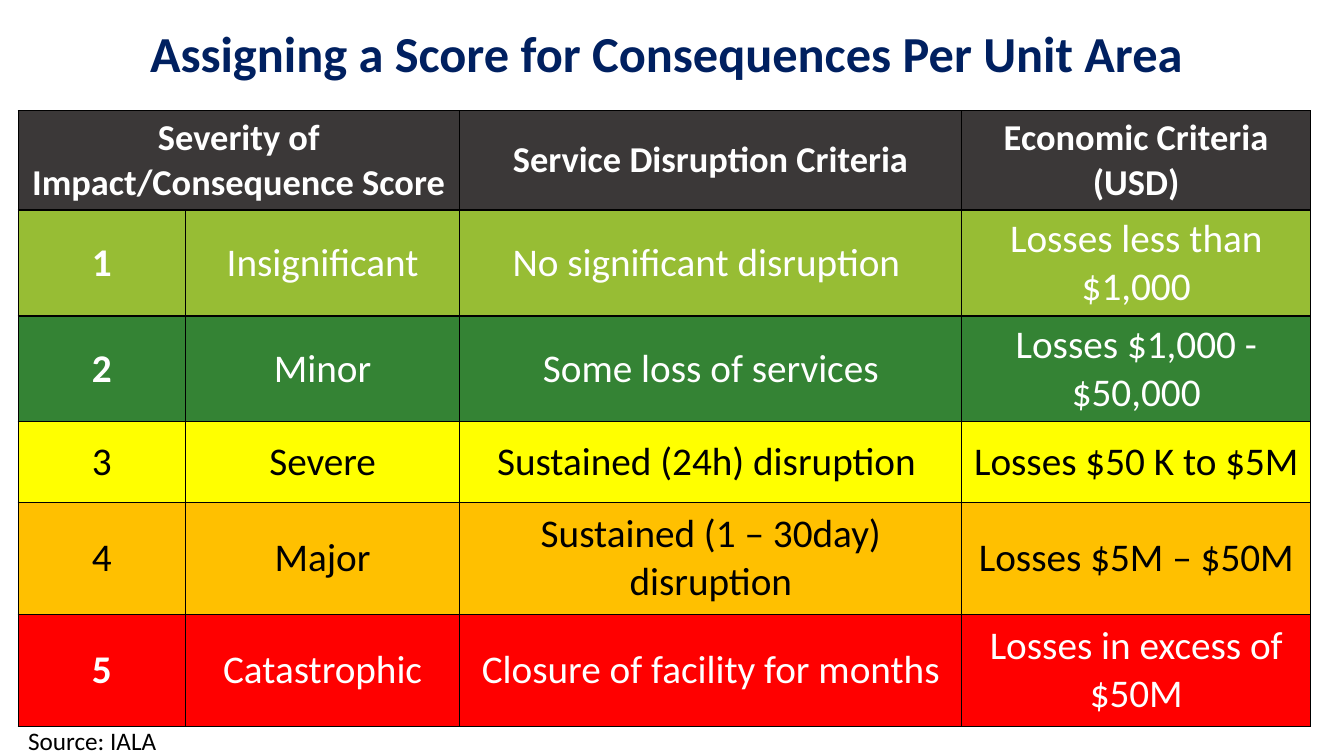
from lxml import etree
from pptx import Presentation
from pptx.dml.color import RGBColor
from pptx.enum import text
from pptx.oxml import ns
from pptx.util import Inches, Pt

FONT = "Calibri"
WHITE, BLACK, NAVY = "FFFFFF", "000000", "002060"
COLUMN_WIDTHS = [1.66, 2.72, 4.98, 3.46]
ROW_HEIGHTS = [0.8, 0.8, 0.8, 0.8, 1.11, 1.11]
HEADER_FILL = "3B3838"
HEADER = ["Severity of Impact/Consequence Score", "", "Service Disruption Criteria", "Economic Criteria (USD)"]
SEVERITIES = [
    ("97BD34", WHITE, ["1", "Insignificant", "No significant disruption ", "Losses less than $1,000"]),
    ("348334", WHITE, ["2", "Minor", "Some loss of services", "Losses $1,000 - $50,000"]),
    ("FFFF00", BLACK, ["3", "Severe", "Sustained (24h) disruption ", "Losses $50 K to $5M"]),
    ("FFC000", BLACK, ["4", "Major", "Sustained (1 – 30day) disruption", "Losses $5M – $50M"]),
    ("FF0000", WHITE, ["5", "Catastrophic", "Closure of facility for months", "Losses in excess of $50M"]),
]


def rgb(color):
    """Return the colour for a hex string."""
    return RGBColor.from_string(color)


def paint(target, color):
    """Give a shape or a cell a solid fill."""
    target.fill.solid()
    target.fill.fore_color.rgb = rgb(color)


def write(frame, words, size, color, bold=False, align=text.PP_ALIGN.CENTER):
    """Write one formatted paragraph into a text frame."""
    frame.word_wrap = True
    paragraph = frame.paragraphs[0]
    paragraph.text = words
    paragraph.alignment = align
    font = paragraph.font
    font.name, font.size, font.bold = FONT, Pt(size), bold
    font.color.rgb = rgb(color)
    return paragraph


def add_borders(cell):
    """Draw a thin black line on every side of a cell."""
    properties = cell._tc.get_or_add_tcPr()
    for side in ("a:lnL", "a:lnR", "a:lnT", "a:lnB"):
        line = etree.SubElement(properties, ns.qn(side), w=str(Pt(1)))
        fill = etree.SubElement(line, ns.qn("a:solidFill"))
        etree.SubElement(fill, ns.qn("a:srgbClr"), val=BLACK)


def place_title(slide, left, top, width, height):
    """Place the slide title in its box."""
    title = slide.shapes.title
    title.left, title.top, title.width, title.height = map(Inches, (left, top, width, height))
    paint(title, WHITE)
    title.text_frame.vertical_anchor = text.MSO_ANCHOR.MIDDLE
    title.text_frame.auto_size = text.MSO_AUTO_SIZE.NONE
    paragraph = write(title.text_frame, "Assigning a Score for Consequences Per Unit Area ", 36, NAVY, True)
    paragraph.line_spacing = 0.9


def place_score_table(slide, left, top):
    """Place the table of consequence scores at a corner."""
    frame = slide.shapes.add_table(
        len(ROW_HEIGHTS), len(COLUMN_WIDTHS), Inches(left), Inches(top),
        Inches(sum(COLUMN_WIDTHS)), Inches(sum(ROW_HEIGHTS)))
    table = frame.table
    for column, width in zip(table.columns, COLUMN_WIDTHS):
        column.width = Inches(width)
    rows = [(HEADER_FILL, WHITE, HEADER)] + SEVERITIES
    for row_index, (fill, color, entries) in enumerate(rows):
        table.rows[row_index].height = Inches(ROW_HEIGHTS[row_index])
        is_header = row_index == 0
        for column_index, entry in enumerate(entries):
            cell = table.cell(row_index, column_index)
            add_borders(cell)
            paint(cell, fill)
            cell.vertical_anchor = text.MSO_ANCHOR.MIDDLE
            is_bold = is_header or (column_index == 0 and color == WHITE)
            write(cell.text_frame, entry, 26 if is_header else 28, color, is_bold)
    table.cell(0, 0).merge(table.cell(0, 1))


def place_source(slide, left, top, width, height):
    """Place the source note in its box."""
    box = slide.shapes.add_textbox(*map(Inches, (left, top, width, height)))
    write(box.text_frame, "Source: IALA", 18, BLACK, align=text.PP_ALIGN.LEFT)


def main():
    """Build and save the presentation."""
    presentation = Presentation()
    presentation.slide_width, presentation.slide_height = Inches(13.33), Inches(7.5)
    slide = presentation.slides.add_slide(presentation.slide_layouts[5])
    place_title(slide, 0.18, 0.15, 12.98, 0.82)
    place_score_table(slide, 0.18, 1.1)
    place_source(slide, 0.18, 7.15, 1.88, 0.4)
    presentation.save("out.pptx")


if __name__ == "__main__":
    main()
